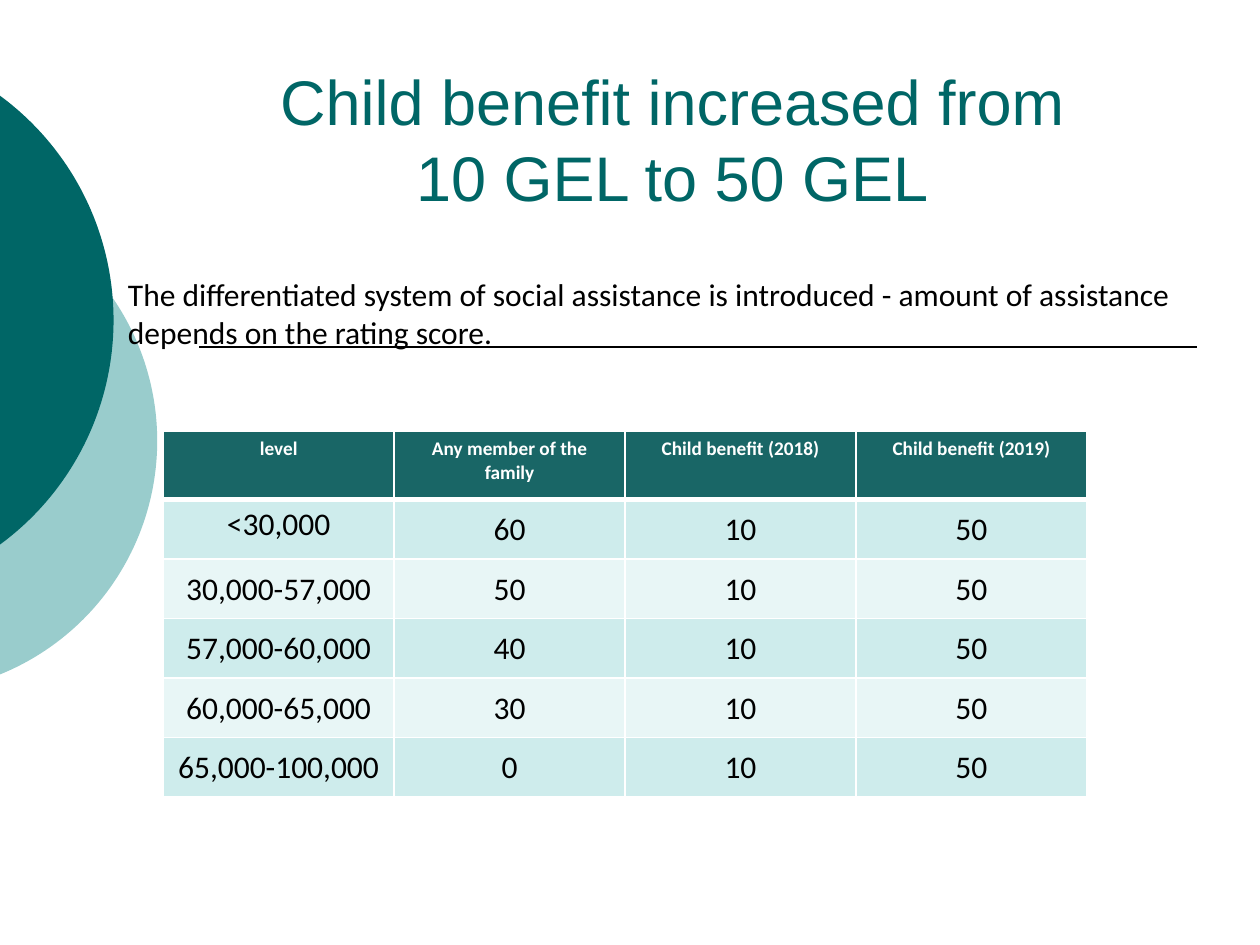
import math
from lxml import etree
from pptx import Presentation
from pptx import util as u
from pptx.dml.color import RGBColor
from pptx.enum import shapes, text
from pptx.oxml.ns import qn


def color(hex_value):
    return RGBColor.from_string(hex_value)


def write(frame, words, size, font="Calibri", ink="000000", bold=False,
          align=text.PP_ALIGN.LEFT, anchor=text.MSO_ANCHOR.TOP, spacing=None):
    frame.word_wrap = True
    frame.vertical_anchor = anchor
    paragraph = frame.paragraphs[0]
    paragraph.alignment = align
    paragraph.line_spacing = spacing
    run = paragraph.add_run()
    run.text = words
    run.font.name = font
    run.font.size = u.Pt(size)
    run.font.bold = bold
    run.font.color.rgb = color(ink)


prs = Presentation()
prs.slide_width, prs.slide_height = u.Cm(25.4), u.Cm(19.05)
slide = prs.slides.add_slide(prs.slide_layouts[6])

rule = slide.shapes.add_connector(shapes.MSO_CONNECTOR.STRAIGHT,
                                  u.Cm(4.02), u.Cm(6.99), u.Cm(24.13), u.Cm(6.99))
rule.line.color.rgb = color("000000")
rule.line.width = u.Pt(1)
etree.SubElement(rule._element.spPr, qn("a:effectLst"))

for left, top, diameter, fill in [(-6.99, 3.81, 10.16, "99CCCC"),
                                  (-8.94, 0.84, 11.23, "006666")]:
    disc = slide.shapes.add_shape(shapes.MSO_SHAPE.CHORD, u.Cm(left), u.Cm(top),
                                  u.Cm(diameter), u.Cm(diameter))
    radius = diameter / 2
    edge_angle = math.degrees(math.acos(-(left + radius) / radius))
    disc.adjustments[0] = (360 - edge_angle) * 0.6
    disc.adjustments[1] = edge_angle * 0.6
    disc.shadow.inherit = False
    disc.fill.solid()
    disc.fill.fore_color.rgb = color(fill)
    disc.line.fill.background()

title = slide.shapes.add_textbox(u.Cm(3.61), u.Cm(1.07), u.Cm(18.62), u.Cm(3.38))
title.text_frame.margin_left = u.Cm(1.52)
write(title.text_frame, "Child benefit increased from 10 GEL to 50 GEL", 36, font="Arial",
      ink="006666", align=text.PP_ALIGN.CENTER, anchor=text.MSO_ANCHOR.BOTTOM,
      spacing=u.Pt(43.4))

intro = slide.shapes.add_textbox(u.Cm(2.33), u.Cm(5.42), u.Cm(21.8), u.Cm(1.8))
write(intro.text_frame, "The differentiated system of social assistance is introduced - "
      "amount of assistance depends on the rating score.", 18)

headings = ["level", "Any member of the family", "Child benefit (2018)", "Child benefit (2019)"]
levels = [("<30,000", "60"), ("30,000-57,000", "50"), ("57,000-60,000", "40"),
          ("60,000-65,000", "30"), ("65,000-100,000", "0")]
rows = [headings] + [[level, member, "10", "50"] for level, member in levels]

benefits = slide.shapes.add_table(len(rows), len(headings), u.Cm(3.29), u.Cm(8.69),
                                  u.Cm(18.62), u.Cm(7.4)).table
for column in benefits.columns:
    column.width = u.Cm(4.655)

for r, row in enumerate(rows):
    benefits.rows[r].height = u.Cm(1.2 if r else 1.38)
    for c, words in enumerate(row):
        cell = benefits.cell(r, c)
        if r == 0:
            fill, look = "196666", dict(size=11, ink="FFFFFF", bold=True)
        else:
            fill, look = ("CEECEC" if r % 2 else "E8F6F6"), dict(size=18)
        write(cell.text_frame, words, align=text.PP_ALIGN.CENTER, **look)
        if r and (r, c) != (1, 0):
            cell.vertical_anchor = text.MSO_ANCHOR.MIDDLE
        else:
            cell.vertical_anchor = text.MSO_ANCHOR.TOP
        if r > 1 or (r, c) == (1, 1):
            cell.margin_left = cell.margin_right = cell.margin_top = u.Cm(0.03)
            cell.margin_bottom = 0
        for side in ("lnL", "lnR", "lnT", "lnB"):
            thick = (r == 0 and side == "lnB") or (r == 1 and side == "lnT")
            border = etree.SubElement(cell._tc.get_or_add_tcPr(), qn("a:" + side),
                                      w=str(u.Pt(3 if thick else 1)))
            paint = etree.SubElement(border, qn("a:solidFill"))
            etree.SubElement(paint, qn("a:srgbClr"), val="FFFFFF")
        cell.fill.solid()
        cell.fill.fore_color.rgb = color(fill)

prs.save("out.pptx")
